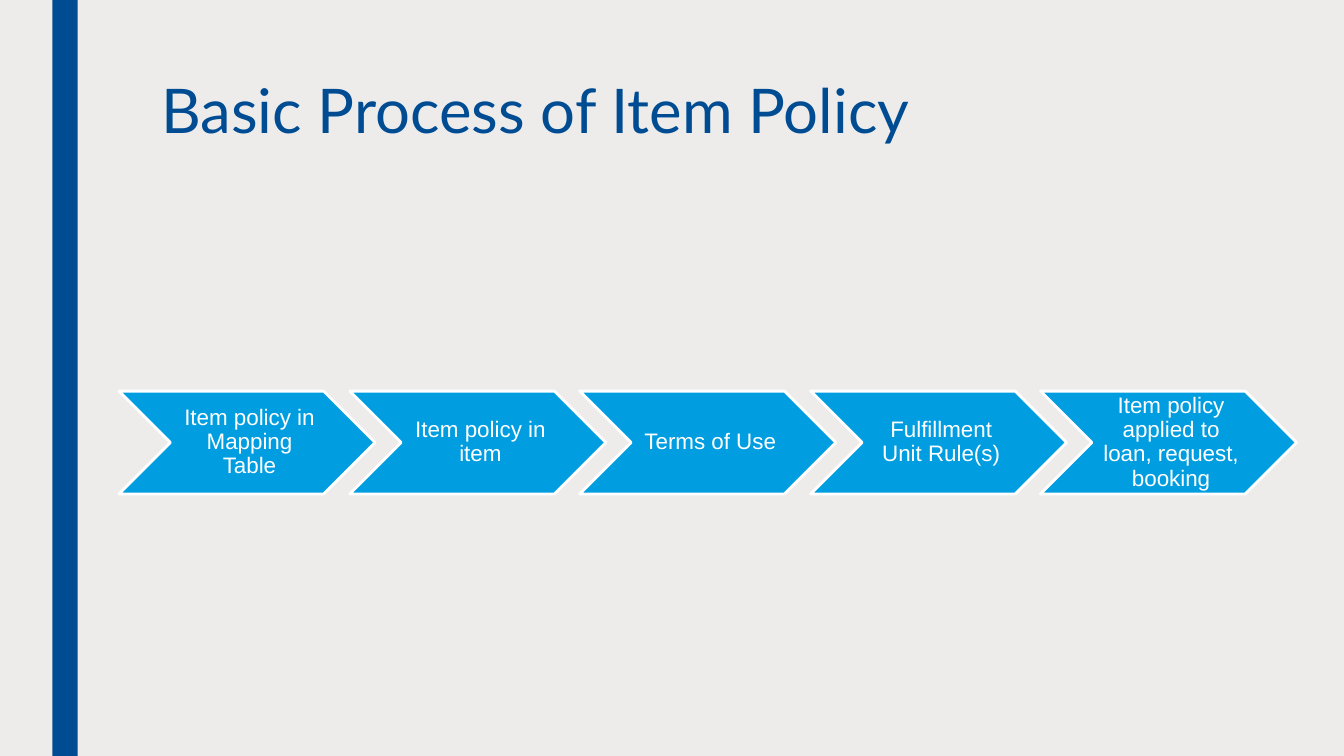
from dataclasses import dataclass
from math import ceil

from pptx import Presentation
from pptx.dml.color import RGBColor
from pptx.enum.shapes import MSO_SHAPE as Preset
from pptx.enum.text import MSO_ANCHOR as Anchor, PP_ALIGN as Align
from pptx.shapes.autoshape import Shape
from pptx.slide import Slide
from pptx.text.text import TextFrame
from pptx.util import Emu, Pt

EMU_PER_PX = 9144  # 100 px to the inch
COLORS = {"background": "EDECEB", "navy": "004C93", "sky": "009EE0", "white": "FFFFFF"}

STEPS = (
    "Item policy in Mapping Table",
    "Item policy in item",
    "Terms of Use",
    "Fulfillment Unit Rule(s)",
    "Item policy applied to loan, request, booking",
)
FIRST_LEFT, LAST_LEFT = 118, 1032
STEP_TOP, STEP_WIDTH, STEP_HEIGHT = 388, 254, 102


@dataclass(frozen=True)
class Box:
    left: int
    top: int
    width: int
    height: int

    def emu(self) -> tuple[Emu, ...]:
        return tuple(px(n) for n in (self.left, self.top, self.width, self.height))


@dataclass(frozen=True)
class TextStyle:
    font: str
    size: int
    color: str
    align: Align
    anchor: Anchor
    line_spacing: float
    insets: tuple[int, int, int, int]


TITLE_STYLE = TextStyle("Lato", 44, "navy", Align.LEFT, Anchor.TOP, 0.89, (10, 5, 10, 5))
STEP_STYLE = TextStyle("Arial", 16, "white", Align.CENTER, Anchor.MIDDLE, 0.9, (7, 2, 2, 2))


def px(length: int) -> Emu:
    return Emu(length * EMU_PER_PX)


def rgb(name: str) -> RGBColor:
    return RGBColor.from_string(COLORS[name])


def write(frame: TextFrame, text: str, style: TextStyle) -> None:
    left, top, right, bottom = map(px, style.insets)
    frame_format = {
        "word_wrap": True,
        "vertical_anchor": style.anchor,
        "margin_left": left,
        "margin_top": top,
        "margin_right": right,
        "margin_bottom": bottom,
    }
    for name, value in frame_format.items():
        setattr(frame, name, value)
    paragraph = frame.paragraphs[0]
    paragraph.alignment = style.align
    paragraph.line_spacing = style.line_spacing
    run = paragraph.add_run()
    run.text = text
    run.font.name = style.font
    run.font.size = Pt(style.size)
    run.font.color.rgb = rgb(style.color)


def add_filled(slide: Slide, preset: Preset, box: Box, fill: str) -> Shape:
    shape = slide.shapes.add_shape(preset, *box.emu())
    shape.shadow.inherit = False
    shape.fill.solid()
    shape.fill.fore_color.rgb = rgb(fill)
    shape.line.fill.background()
    return shape


def add_step(slide: Slide, box: Box, text: str) -> None:
    chevron = add_filled(slide, Preset.CHEVRON, box, "sky")
    chevron.line.color.rgb = rgb("white")
    chevron.line.width = Pt(2)
    write(chevron.text_frame, text, STEP_STYLE)


def main() -> None:
    deck = Presentation()
    deck.slide_width, deck.slide_height = px(1333), px(750)
    slide = deck.slides.add_slide(deck.slide_layouts[6])
    slide.background.fill.solid()
    slide.background.fill.fore_color.rgb = rgb("background")

    add_filled(slide, Preset.RECTANGLE, Box(52, 0, 25, 750), "navy")
    title = slide.shapes.add_textbox(*Box(150, 75, 1050, 162).emu())
    write(title.text_frame, "Basic Process of Item Policy", TITLE_STYLE)

    pitch = (LAST_LEFT - FIRST_LEFT) / (len(STEPS) - 1)
    for index, step in enumerate(STEPS):
        left = FIRST_LEFT + ceil(index * pitch)
        add_step(slide, Box(left, STEP_TOP, STEP_WIDTH, STEP_HEIGHT), step)

    deck.save("out.pptx")


if __name__ == "__main__":
    main()
